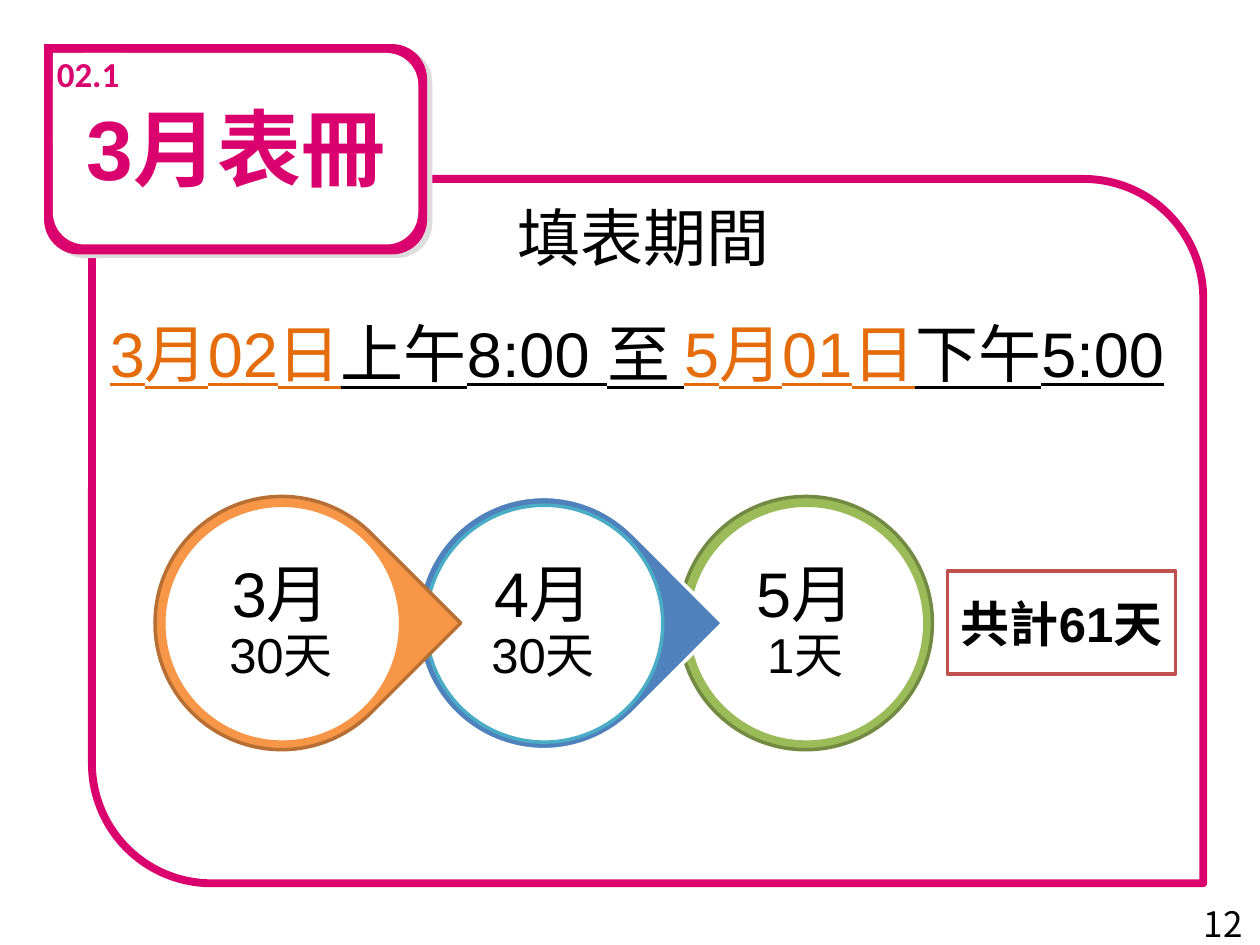
from lxml import etree
from pptx import Presentation
from pptx import util as u
from pptx.dml import color
from pptx.enum import shapes, text
from pptx.oxml import ns

HUES = {
    "pink": "DA006D", "white": "FFFFFF", "black": "000000", "shade": "DDDDDD",
    "rust": "E46C0A", "red": "C0504D", "green": "9BBB59", "moss": "738A42",
    "blue": "4F81BD", "teal": "4BACC6", "orange": "F79646", "brown": "B76F34",
}
KIND = shapes.MSO_SHAPE
ALIGN = text.PP_ALIGN
MIDDLE = text.MSO_ANCHOR.MIDDLE
CJK = "Noto Sans CJK JP"


def rgb(hue):
    return color.RGBColor.from_string(HUES[hue])


def draw(slide, kind, box, fill=None, line=None, width=2, adjust=(), turn=0):
    shape = slide.shapes.add_shape(kind, *map(u.Inches, box))
    shape.shadow.inherit = False
    shape.rotation = turn
    for i, value in enumerate(adjust):
        shape.adjustments[i] = value
    if fill:
        shape.fill.solid()
        shape.fill.fore_color.rgb = rgb(fill)
    else:
        shape.fill.background()
    if line:
        shape.line.color.rgb = rgb(line)
        shape.line.width = u.Pt(width)
    else:
        shape.line.fill.background()
    return shape


def style(font, size, hue="black", name="Arial", bold=False):
    font.size = u.Pt(size)
    font.color.rgb = rgb(hue)
    font.name = name
    font.bold = bold


def write(slide, box, words, size, hue="black", name="Arial", bold=False,
          align=ALIGN.CENTER, wrap=True):
    frame = slide.shapes.add_textbox(*map(u.Inches, box)).text_frame
    frame.word_wrap = wrap
    para = frame.paragraphs[0]
    para.alignment = align
    para.add_run().text = words
    style(para.font, size, hue, name, bold)
    return frame


def shade(shape):
    effects = shape._element.spPr.find(ns.qn("a:effectLst"))
    outer = etree.SubElement(effects, ns.qn("a:outerShdw"), blurRad="0",
                             dist=str(u.Pt(3.6)), dir=str(34 * 60000),
                             algn="tl", rotWithShape="0")
    etree.SubElement(outer, ns.qn("a:srgbClr"), val=HUES["shade"])


def badge(slide):
    layers = [("pink", (0.35, 0.35, 3.04, 1.67), (0.35, 0.35, 0.56, 0.78)),
              ("white", (0.42, 0.42, 2.9, 1.52), (0.42, 0.42, 0.54, 0.71))]
    for hue, body, corner in layers:
        card = draw(slide, KIND.ROUNDED_RECTANGLE, body, hue)
        if hue == "pink":
            shade(card)
        draw(slide, KIND.RECTANGLE, corner, hue)
    write(slide, (0.35, 0.37, 0.7, 0.44), "02.1", 20, "pink", "Calibri", True,
          wrap=False)
    write(slide, (0.38, 0.72, 2.99, 0.91), "3月表冊", 48, "pink", bold=True)


def period(slide):
    frame = write(slide, (0.72, 1.53, 8.67, 2.2), " 填表期間", 36)
    para = frame.add_paragraph()
    para.alignment = ALIGN.CENTER
    para.space_before = u.Pt(23)
    style(para.font, 36)
    para.font.underline = True
    parts = [("3月02日", "rust"), ("上午8:00 至 ", "black"),
             ("5月01日", "rust"), ("下午5:00", "black")]
    for words, hue in parts:
        run = para.add_run()
        run.text = words
        run.font.color.rgb = rgb(hue)


def month(slide, left, kind, turn, fill, edge, ring, name, days):
    draw(slide, kind, (left, 3.94, 2.01, 2.01), fill, edge, turn=turn)
    draw(slide, KIND.OVAL, (left + 0.07, 4.01, 1.88, 1.88), "white", ring)
    frame = write(slide, (left + 0.33, 4.28, 1.34, 1.34), name, 36)
    frame.vertical_anchor = MIDDLE
    frame.margin_left = frame.margin_right = u.Inches(0.05)
    para = frame.paragraphs[0]
    para.line_spacing = 0.9
    para.add_line_break()
    run = para.add_run()
    run.text = days
    run.font.size = u.Pt(28)


def total(slide):
    box = draw(slide, KIND.FLOWCHART_PROCESS, (7.52, 4.53, 1.81, 0.82),
               "white", "red")
    frame = box.text_frame
    frame.word_wrap = True
    frame.vertical_anchor = MIDDLE
    para = frame.paragraphs[0]
    para.alignment = ALIGN.CENTER
    for words, name in [("共計", CJK), ("61", "Arial"), ("天", CJK)]:
        run = para.add_run()
        run.text = words
        style(run.font, 28, name=name, bold=True)


def main():
    deck = Presentation()
    deck.slide_width, deck.slide_height = u.Inches(10), u.Inches(7.5)
    slide = deck.slides.add_slide(deck.slide_layouts[6])
    draw(slide, KIND.ROUND_2_DIAG_RECTANGLE, (0.73, 1.42, 8.82, 5.59),
         line="pink", width=4.5, adjust=(0, 0.17))
    badge(slide)
    page = write(slide, (7.63, 7.13, 2.33, 0.4), "12", 20, name=CJK,
                 align=ALIGN.RIGHT)
    page.vertical_anchor = MIDDLE
    period(slide)
    months = [
        (KIND.TEAR, 45, "orange", "brown", "orange", "3月", "30天"),
        (KIND.TEAR, 45, "blue", "white", "teal", "4月", "30天"),
        (KIND.OVAL, 0, "green", "moss", "green", "5月", "1天"),
    ]
    for i, parts in reversed(list(enumerate(months))):
        month(slide, 1.23 + 2.08 * i, *parts)
    total(slide)
    deck.save("out.pptx")


if __name__ == "__main__":
    main()
